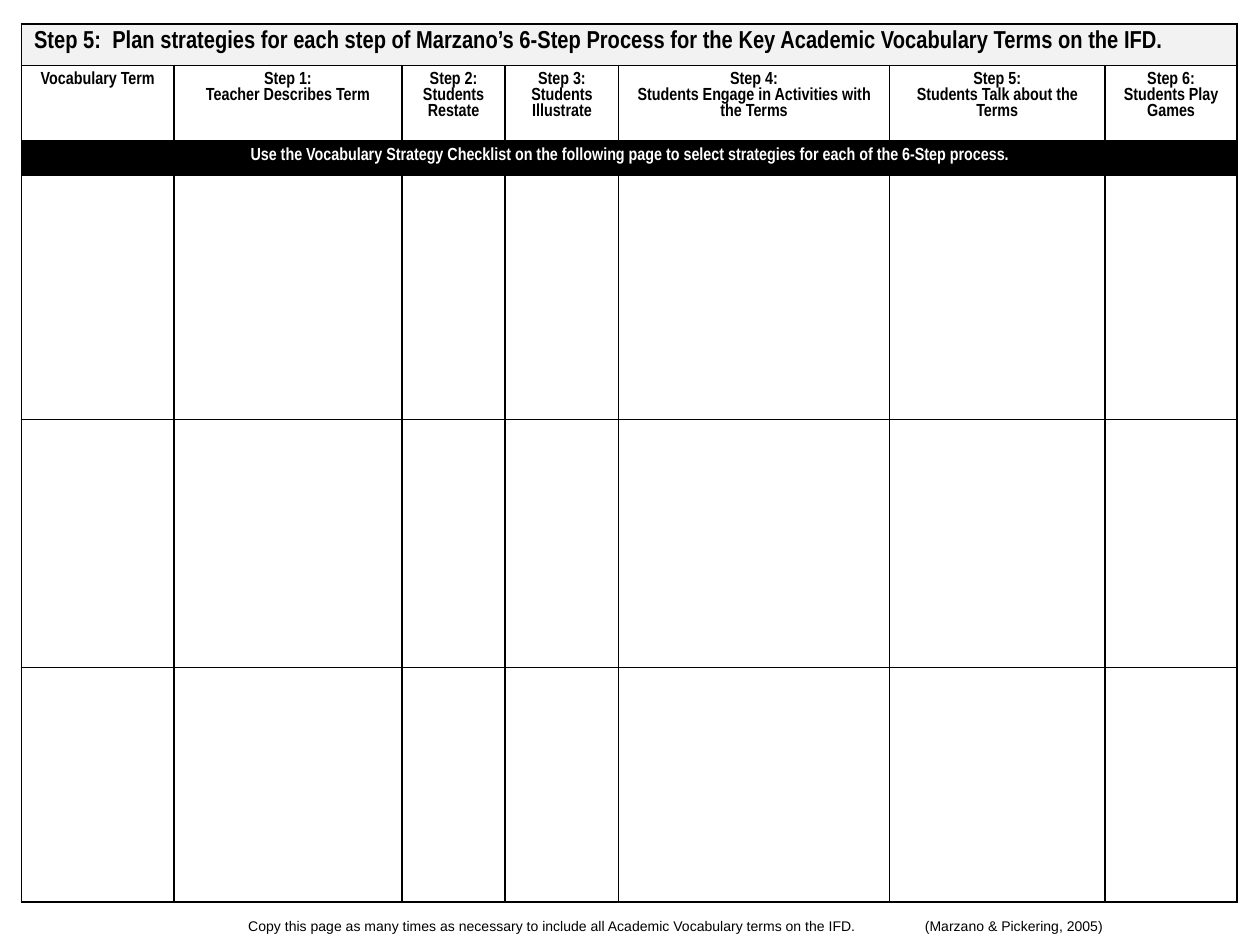
from dataclasses import dataclass

from lxml import etree
from pptx import Presentation
from pptx.dml.color import RGBColor
from pptx.enum.text import PP_ALIGN
from pptx.oxml.ns import qn
from pptx.util import Inches, Pt

LEFT, CENTER = PP_ALIGN.LEFT, PP_ALIGN.CENTER
BLANK_LAYOUT = 6

TITLE = ("Step 5:  Plan strategies for each step of Marzano’s 6-Step Process "
         "for the Key Academic Vocabulary Terms on the IFD.")
HEADINGS = [
    "Vocabulary Term",
    "Step 1:\nTeacher Describes Term",
    "Step 2:\nStudents Restate",
    "Step 3:\nStudents Illustrate",
    "Step 4:\nStudents Engage in Activities with the Terms",
    "Step 5:\nStudents Talk about the Terms",
    "Step 6:\nStudents Play Games",
]
INSTRUCTION = ("Use the Vocabulary Strategy Checklist on the following page "
               "to select strategies for each of the 6-Step process.")
COPY_NOTE = ("Copy this page as many times as necessary to include all "
             "Academic Vocabulary terms on the IFD.")
CITATION = "(Marzano & Pickering, 2005)"

COLUMN_WIDTHS = [1.21, 1.81, 0.82, 0.9, 2.15, 1.71, 1.05]
ROW_HEIGHTS = [0.33, 0.6, 0.27, 1.94, 1.97, 1.86]


@dataclass(frozen=True)
class Theme:
    ink: str = "000000"
    paper: str = "FFFFFF"
    title_fill: str = "F2F2F2"
    table_font: str = "Arial Narrow"
    note_font: str = "Arial"
    title_size: float = 14
    heading_size: float = 10
    note_size: float = 8
    border_width: float = 1


def write_text(frame, text, *, font, size, color, bold=False, align=LEFT):
    """Fill a text frame, one paragraph for each line of text."""
    frame.word_wrap = True
    for index, line in enumerate(text.split("\n")):
        paragraph = frame.paragraphs[0] if index == 0 else frame.add_paragraph()
        paragraph.alignment = align
        run = paragraph.add_run()
        run.text = line
        run.font.name = font
        run.font.size = Pt(size)
        run.font.bold = bold
        run.font.color.rgb = RGBColor.from_string(color)


class SlideBuilder:
    def __init__(self, slide, theme):
        self.slide = slide
        self.theme = theme

    def grid(self, left, top, widths, heights):
        """Add a plain ruled table."""
        table = self.slide.shapes.add_table(
            len(heights), len(widths), Inches(left), Inches(top),
            Inches(sum(widths)), Inches(sum(heights))).table
        table.first_row = table.horz_banding = False
        for column, width in zip(table.columns, widths):
            column.width = Inches(width)
        for row, height in zip(table.rows, heights):
            row.height = Inches(height)
            for cell in row.cells:
                self.fill(cell, self.theme.paper)
                self.border(cell)
        return table

    def fill(self, cell, color):
        cell.fill.solid()
        cell.fill.fore_color.rgb = RGBColor.from_string(color)

    def border(self, cell):
        properties = cell._tc.get_or_add_tcPr()
        for position, side in enumerate(("a:lnL", "a:lnR", "a:lnT", "a:lnB")):
            line = etree.Element(qn(side), w=str(Pt(self.theme.border_width)))
            solid = etree.SubElement(line, qn("a:solidFill"))
            etree.SubElement(solid, qn("a:srgbClr"), val=self.theme.ink)
            properties.insert(position, line)

    def cell_text(self, cell, text, **style):
        defaults = dict(font=self.theme.table_font, color=self.theme.ink,
                        size=self.theme.heading_size, bold=True, align=CENTER)
        write_text(cell.text_frame, text, **(defaults | style))

    def band(self, table, row, text, fill, **style):
        """Merge a whole row into one filled band of text."""
        cell = table.cell(row, 0)
        cell.merge(table.cell(row, len(table.columns) - 1))
        self.fill(cell, fill)
        self.cell_text(cell, text, **style)

    def note(self, text, left, top, width, height, tab):
        """Add a small line of text with one tab stop."""
        frame = self.slide.shapes.add_textbox(
            Inches(left), Inches(top), Inches(width), Inches(height)).text_frame
        frame.margin_left = 0
        write_text(frame, text, font=self.theme.note_font,
                   size=self.theme.note_size, color=self.theme.ink)
        properties = frame.paragraphs[0]._p.get_or_add_pPr()
        stops = etree.SubElement(properties, qn("a:tabLst"))
        etree.SubElement(stops, qn("a:tab"), pos=str(Inches(tab)), algn="l")


def main():
    presentation = Presentation()
    presentation.slide_width = Inches(10)
    presentation.slide_height = Inches(7.5)
    layout = presentation.slide_layouts[BLANK_LAYOUT]
    theme = Theme()
    builder = SlideBuilder(presentation.slides.add_slide(layout), theme)

    # Planning table: title, step headings, instruction, empty rows
    planner = builder.grid(0.17, 0.19, COLUMN_WIDTHS, ROW_HEIGHTS)
    builder.band(planner, 0, TITLE, theme.title_fill,
                 size=theme.title_size, align=LEFT)
    for column, heading in enumerate(HEADINGS):
        builder.cell_text(planner.cell(1, column), heading)
    builder.band(planner, 2, INSTRUCTION, theme.ink, color=theme.paper)

    # Footer: copying note and citation
    builder.note(f"{COPY_NOTE}\t{CITATION}", 1.97, 7.23, 7.91, 0.24, tab=5.37)

    presentation.save("out.pptx")


if __name__ == "__main__":
    main()
